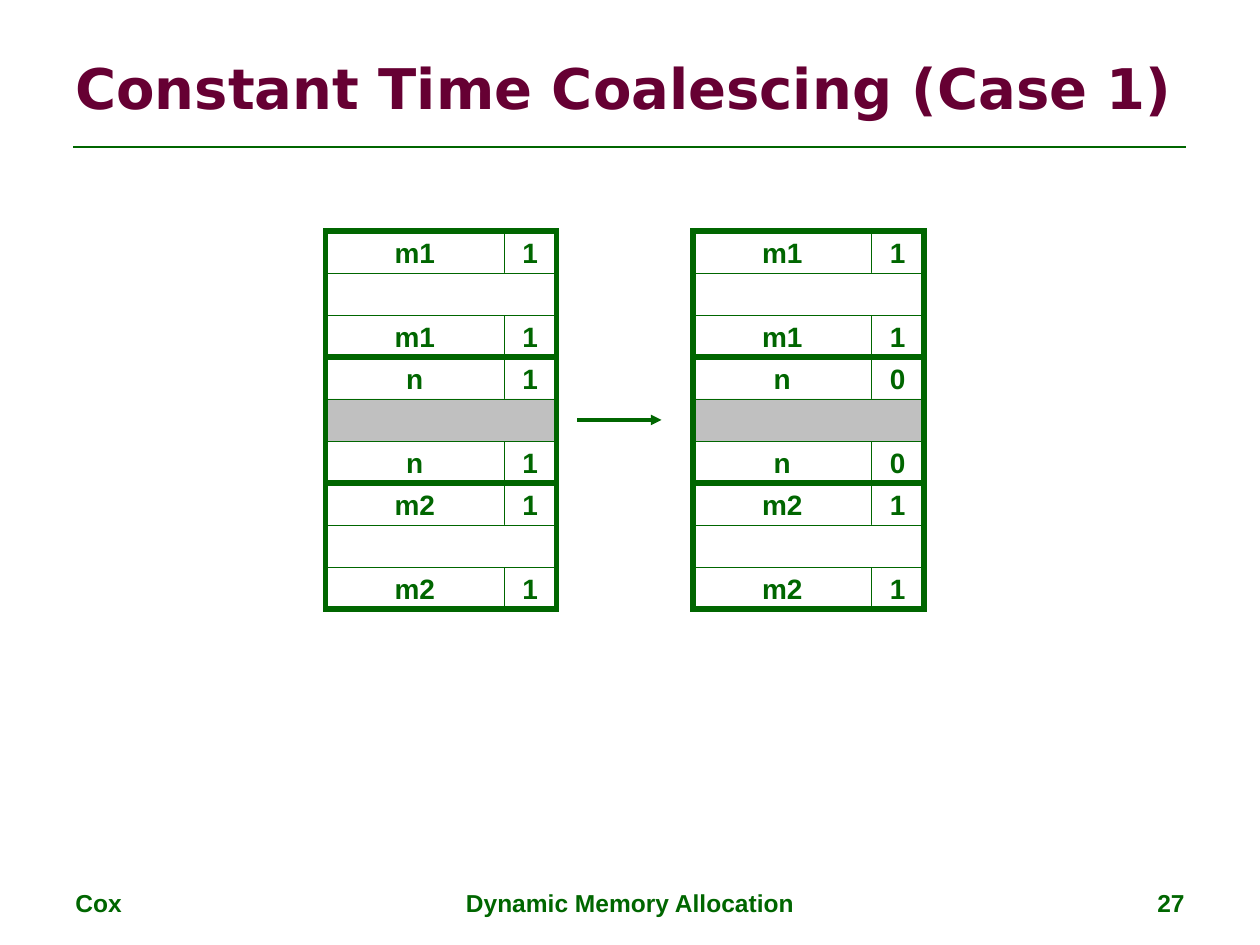
import dataclasses

import lxml.etree
import pptx
import pptx.dml.color
import pptx.enum.shapes
import pptx.enum.text
import pptx.oxml.ns
import pptx.util

ALIGN = pptx.enum.text.PP_ALIGN
ANCHOR = pptx.enum.text.MSO_ANCHOR
COLUMNS, ROWS = 120, 90


@dataclasses.dataclass(frozen=True)
class Theme:
    green: str = "006600"
    maroon: str = "660033"
    white: str = "FFFFFF"
    gray: str = "C0C0C0"
    body_font: str = "Arial"
    title_font: str = "DejaVu Sans"
    title_size: int = 32
    cell_size: int = 16
    footer_size: int = 14
    thin: float = 0.25
    rule: float = 1.5
    arrow: float = 2
    frame: float = 3


def rgb(value):
    return pptx.dml.color.RGBColor.from_string(value)


def add_xml(parent, tag, **attributes):
    return lxml.etree.SubElement(parent, pptx.oxml.ns.qn(tag), **attributes)


def write_text(tf, text, size, font, color, align=ALIGN.LEFT, anchor=ANCHOR.TOP, wrap=True):
    tf.word_wrap = wrap
    tf.vertical_anchor = anchor
    p = tf.paragraphs[0]
    p.alignment = align
    r = p.add_run()
    r.text = text
    r.font.size = pptx.util.Pt(size)
    r.font.name = font
    r.font.bold = True
    r.font.color.rgb = rgb(color)


class SlideBuilder:
    def __init__(self, prs, theme):
        self.theme = theme
        self.s = prs.slides.add_slide(prs.slide_layouts[6])
        self.unit_x = prs.slide_width / COLUMNS
        self.unit_y = prs.slide_height / ROWS

    def grid(self, *lengths):
        units = (self.unit_x, self.unit_y) * 2
        return [round(n * unit) for n, unit in zip(lengths, units)]

    def text(self, text, x, y, w, h, **style):
        sp = self.s.shapes.add_textbox(*self.grid(x, y, w, h))
        write_text(sp.text_frame, text, **style)

    def box(self, x, y, w, h, fill=None, width=None, text=None):
        t = self.theme
        sp = self.s.shapes.add_shape(
            pptx.enum.shapes.MSO_SHAPE.RECTANGLE, *self.grid(x, y, w, h))
        sp.shadow.inherit = False
        if fill:
            sp.fill.solid()
            sp.fill.fore_color.rgb = rgb(fill)
        else:
            sp.fill.background()
        sp.line.color.rgb = rgb(t.green)
        sp.line.width = pptx.util.Pt(width or t.thin)
        add_xml(sp.line._get_or_add_ln(), "a:miter", lim="800000")
        if text:
            write_text(sp.text_frame, text, size=t.cell_size, font=t.body_font,
                       color=t.green, align=ALIGN.CENTER, anchor=ANCHOR.MIDDLE, wrap=False)

    def line(self, x1, y1, x2, y2, width, arrow=False):
        cxn = self.s.shapes.add_connector(
            pptx.enum.shapes.MSO_CONNECTOR.STRAIGHT, *self.grid(x1, y1, x2, y2))
        cxn.line.color.rgb = rgb(self.theme.green)
        cxn.line.width = pptx.util.Pt(width)
        if arrow:
            add_xml(cxn.line._get_or_add_ln(), "a:tailEnd", type="triangle")
        add_xml(cxn._element.spPr, "a:effectLst")

    def block(self, x, y, size, flag, fill):
        size_w, flag_w, row_h = 17, 5, 4
        width = size_w + flag_w
        for row in (0, 2):
            top = y + row * row_h
            self.box(x, top, size_w, row_h, self.theme.white, text=size)
            self.box(x + size_w, top, flag_w, row_h, self.theme.white, text=flag)
        self.box(x, y + row_h, width, row_h, fill)
        self.box(x, y, width, 3 * row_h, width=self.theme.frame)

    def heap(self, x, y, middle_flag):
        t = self.theme
        blocks = [("m1", "1", t.white), ("n", middle_flag, t.gray), ("m2", "1", t.white)]
        for i, (size, flag, fill) in enumerate(blocks):
            self.block(x, y + 12 * i, size, flag, fill)


def main():
    prs = pptx.Presentation()
    prs.slide_width = pptx.util.Inches(10)
    prs.slide_height = pptx.util.Inches(7.5)
    theme = Theme()
    slide = SlideBuilder(prs, theme)

    slide.text("Constant Time Coalescing (Case 1)", 6, 3.6, 108, 9.36,
               size=theme.title_size, font=theme.title_font, color=theme.maroon,
               anchor=ANCHOR.MIDDLE)
    slide.line(7, 14, 113, 14, theme.rule)

    slide.heap(31, 22, middle_flag="1")
    slide.heap(66, 22, middle_flag="0")
    slide.line(55, 40, 63, 40, theme.arrow, arrow=True)

    footers = [
        ("Cox", 6, 28, ALIGN.LEFT),
        ("Dynamic Memory Allocation", 41, 38, ALIGN.CENTER),
        ("27", 86, 28, ALIGN.RIGHT),
    ]
    for text, x, w, align in footers:
        slide.text(text, x, 84, w, 4.2, size=theme.footer_size, font=theme.body_font,
                   color=theme.green, align=align)

    prs.save("out.pptx")


if __name__ == "__main__":
    main()
